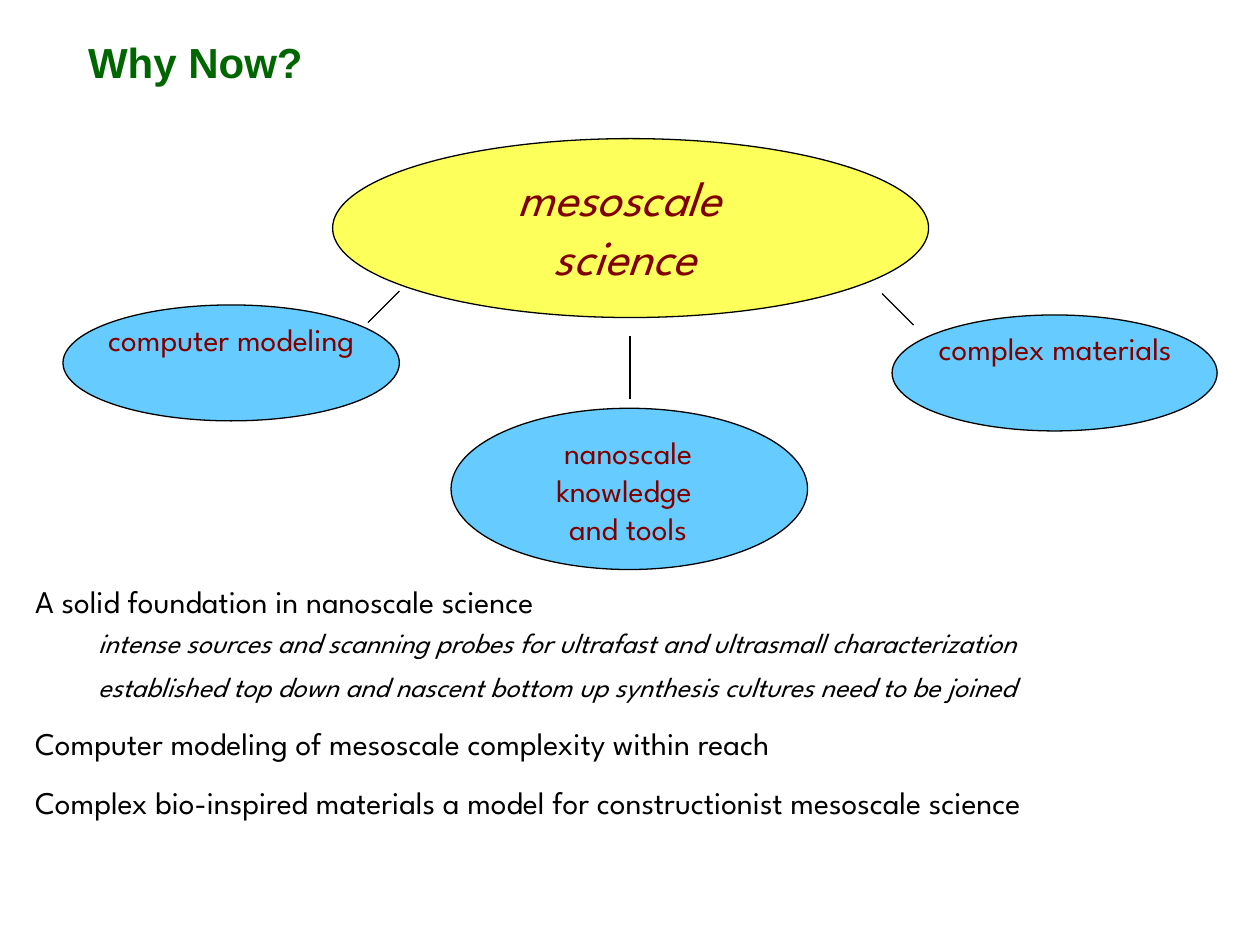
from lxml.etree import SubElement
from pptx import Presentation
from pptx.dml.color import RGBColor
from pptx.enum.shapes import MSO_CONNECTOR, MSO_SHAPE
from pptx.enum.text import PP_ALIGN
from pptx.oxml.ns import qn
from pptx.util import Inches, Pt

GREEN = RGBColor(0x00, 0x66, 0x00)
MAROON = RGBColor(0x80, 0x00, 0x00)
BLACK = RGBColor(0x00, 0x00, 0x00)
BLUE = RGBColor(0x66, 0xCC, 0xFF)
YELLOW = RGBColor(0xFD, 0xFF, 0x5A)

WIDTH, HEIGHT = Inches(10), Inches(7.5)
BODY_FONT = "League Spartan"

TITLE = {"name": "Arial", "size": Pt(24), "bold": True}
CENTRE = {"name": BODY_FONT, "size": Pt(28), "italic": True}
LABEL = {"name": BODY_FONT, "size": Pt(18)}
POINT = {"name": BODY_FONT, "size": Pt(18)}
DETAIL = {"name": BODY_FONT, "size": Pt(16), "italic": True}

# Ellipse place, label place, label lines
SUPPORTS = [
    ((3.58, 3.24, 2.83, 1.28), (3.82, 3.39, 2.33, 1.01),
     ["nanoscale", "knowledge ", "and tools"]),
    ((0.5, 2.42, 2.67, 0.92), (0.74, 2.49, 2.19, 0.71), ["computer modeling"]),
    ((7.08, 2.5, 2.58, 0.92), (7.31, 2.56, 2.13, 0.71), ["complex materials"]),
]
LINKS = [
    ((2.92, 2.56), (3.17, 2.31)),
    ((7.25, 2.58), (7, 2.33)),
    ((5, 2.67), (5, 3.17)),
]
# Text, format, space after in points
POINTS = [
    ("A solid foundation in nanoscale science", POINT, 3),
    ("intense sources and scanning probes for ultrafast and ultrasmall "
     "characterization", DETAIL, 6),
    ("established top down and nascent bottom up synthesis cultures need to "
     "be joined", DETAIL, 12),
    ("Computer modeling of mesoscale complexity within reach", POINT, 12),
    ("Complex bio-inspired materials a model for constructionist mesoscale "
     "science", POINT, 12),
]


def inches(values):
    return [Inches(value) for value in values]


def write(para, text, style, colour):
    span = para.add_run()
    span.text = text
    for key, value in style.items():
        setattr(span.font, key, value)
    span.font.color.rgb = colour


def add_text(shapes, place, lines, style, colour, align=PP_ALIGN.LEFT):
    frame = shapes.add_textbox(*inches(place)).text_frame
    frame.word_wrap = True
    for number, line in enumerate(lines):
        para = frame.add_paragraph() if number else frame.paragraphs[0]
        para.alignment = align
        write(para, line, style, colour)
    return frame


def add_ellipse(shapes, place, fill):
    ellipse = shapes.add_shape(MSO_SHAPE.OVAL, *inches(place))
    ellipse.shadow.inherit = False
    ellipse.fill.solid()
    ellipse.fill.fore_color.rgb = fill
    ellipse.line.color.rgb = BLACK
    ellipse.line.width = Pt(0.75)


def add_link(shapes, start, end):
    link = shapes.add_connector(MSO_CONNECTOR.STRAIGHT, *inches(start + end))
    link.line.color.rgb = BLACK
    link.line.width = Pt(0.75)
    SubElement(link._element.spPr, qn("a:effectLst"))


def add_points(shapes, place):
    texts = [text for text, _, _ in POINTS]
    frame = add_text(shapes, place, texts, POINT, BLACK)
    for para, (_, style, after) in zip(frame.paragraphs, POINTS):
        para.space_after = Pt(after)
        if style is DETAIL:
            para.level = 1
            properties = para._p.get_or_add_pPr()
            properties.set("marL", str(Inches(0.81)))
            properties.set("indent", str(Inches(-0.31)))
            for key, value in style.items():
                setattr(para.runs[0].font, key, value)


def main():
    deck = Presentation()
    deck.slide_width, deck.slide_height = WIDTH, HEIGHT
    page = deck.slides.add_slide(deck.slide_layouts[6])
    shapes = page.shapes

    # Heading
    add_text(shapes, (0.6, 0.24, 8.12, 0.5), ["Why Now?"], TITLE, GREEN)

    # Supporting fields
    for place, label_place, lines in SUPPORTS:
        add_ellipse(shapes, place, BLUE)
        add_text(shapes, label_place, lines, LABEL, MAROON, PP_ALIGN.CENTER)

    # Central field
    group = shapes.add_group_shape()
    add_ellipse(group.shapes, (2.64, 1.1, 4.73, 1.42), YELLOW)
    add_text(group.shapes, (2.42, 1.28, 5.08, 1.04), ["mesoscale ", "science"],
             CENTRE, MAROON, PP_ALIGN.CENTER)

    # Links between the fields
    for start, end in LINKS:
        add_link(shapes, start, end)

    # Reasons
    add_points(shapes, (0.18, 4.57, 9.69, 2.52))

    deck.save("out.pptx")


if __name__ == "__main__":
    main()
